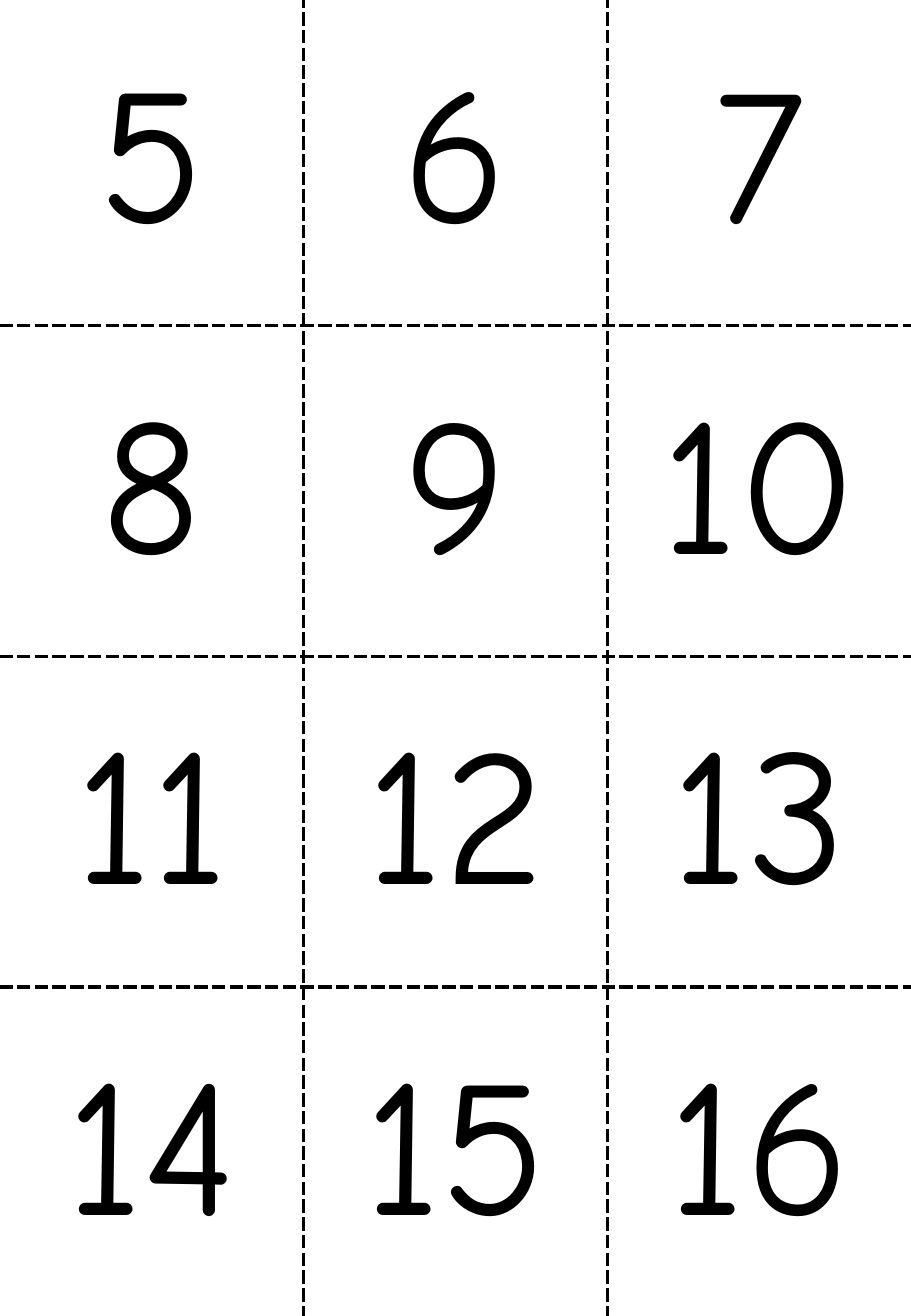
from dataclasses import dataclass

from lxml.etree import SubElement
from pptx import Presentation
from pptx.dml.color import RGBColor
from pptx.enum.text import MSO_ANCHOR, PP_ALIGN
from pptx.oxml.ns import qn
from pptx.table import _Cell
from pptx.util import Cm, Pt

BLACK = RGBColor(0x00, 0x00, 0x00)
WHITE = RGBColor(0xFF, 0xFF, 0xFF)

ROWS, COLUMNS = 4, 3
FIRST_NUMBER = 5
CARD_WIDTH, CARD_HEIGHT = Cm(6.35), Cm(6.91)
TABLE_TOP = Cm(-0.1)
NUMBER_FORMAT = {"name": "Comic Neue", "size": Pt(115), "bold": False}


@dataclass(frozen=True)
class Border:
    color: RGBColor
    width: Pt
    dash: str


CUT_LINE = Border(BLACK, Pt(2.25), "sysDash")
PAGE_EDGE = Border(WHITE, Pt(1), "solid")


def set_border(cell: _Cell, side: str, border: Border) -> None:
    properties = cell._tc.get_or_add_tcPr()
    line = SubElement(properties, qn(f"a:ln{side}"), w=str(int(border.width)))
    fill = SubElement(line, qn("a:solidFill"))
    SubElement(fill, qn("a:srgbClr"), val=str(border.color))
    SubElement(line, qn("a:prstDash"), val=border.dash)


def fill_card(cell: _Cell, number: int) -> None:
    cell.vertical_anchor = MSO_ANCHOR.MIDDLE
    paragraph = cell.text_frame.paragraphs[0]
    paragraph.alignment = PP_ALIGN.CENTER
    run = paragraph.add_run()
    run.text = str(number)
    for name, value in NUMBER_FORMAT.items():
        setattr(run.font, name, value)
    run.font.color.rgb = BLACK


def main() -> None:
    presentation = Presentation()
    presentation.slide_width = Cm(19.05)
    presentation.slide_height = Cm(27.51)
    slide = presentation.slides.add_slide(presentation.slide_layouts[6])

    # Grid of number cards
    table = slide.shapes.add_table(
        ROWS, COLUMNS, 0, TABLE_TOP, CARD_WIDTH * COLUMNS, CARD_HEIGHT * ROWS
    ).table
    table.first_row = False
    table.horz_banding = False
    for column in table.columns:
        column.width = CARD_WIDTH
    for row in table.rows:
        row.height = CARD_HEIGHT

    # Numbers and cut lines; the left, top and right page edges stay white
    for index, cell in enumerate(table.iter_cells()):
        row_index, column_index = divmod(index, COLUMNS)
        fill_card(cell, FIRST_NUMBER + index)
        on_page_edge = {
            "L": column_index == 0,
            "R": column_index == COLUMNS - 1,
            "T": row_index == 0,
            "B": False,
        }
        for side, is_edge in on_page_edge.items():
            set_border(cell, side, PAGE_EDGE if is_edge else CUT_LINE)
        cell.fill.background()

    presentation.save("out.pptx")


if __name__ == "__main__":
    main()
